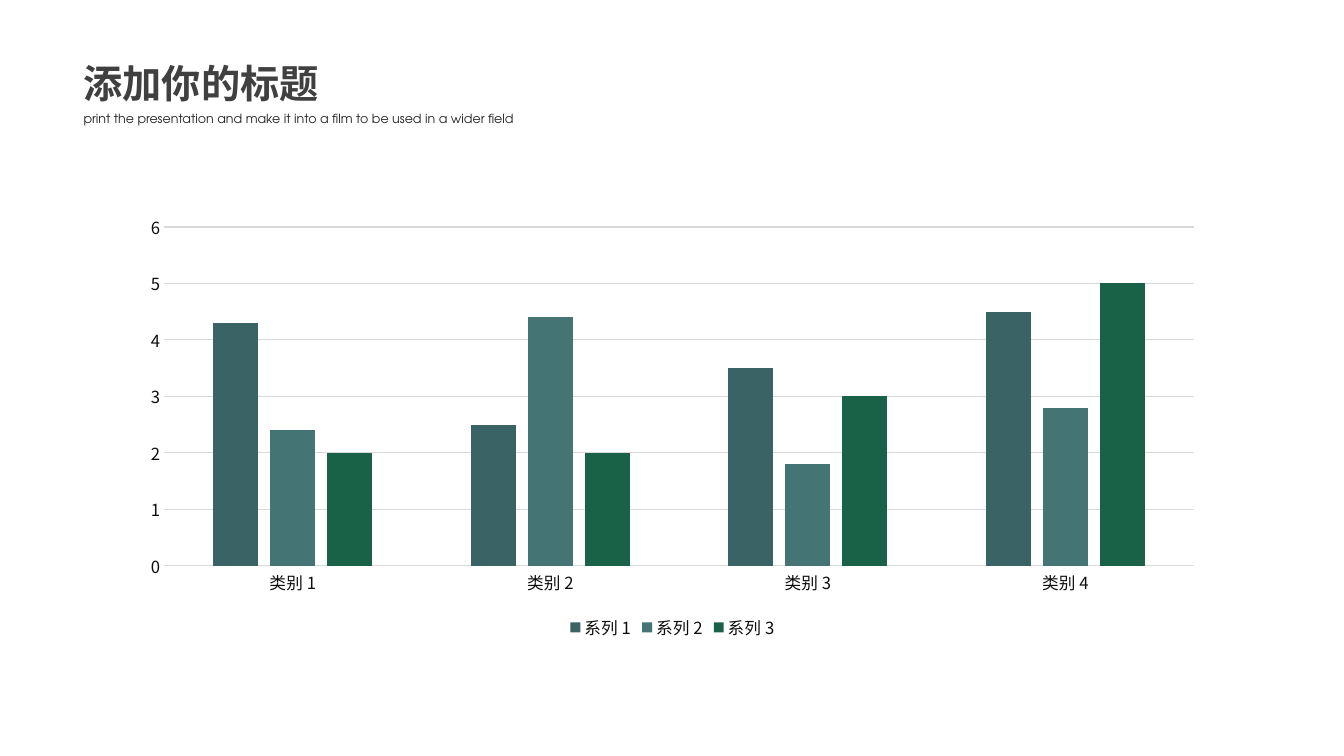
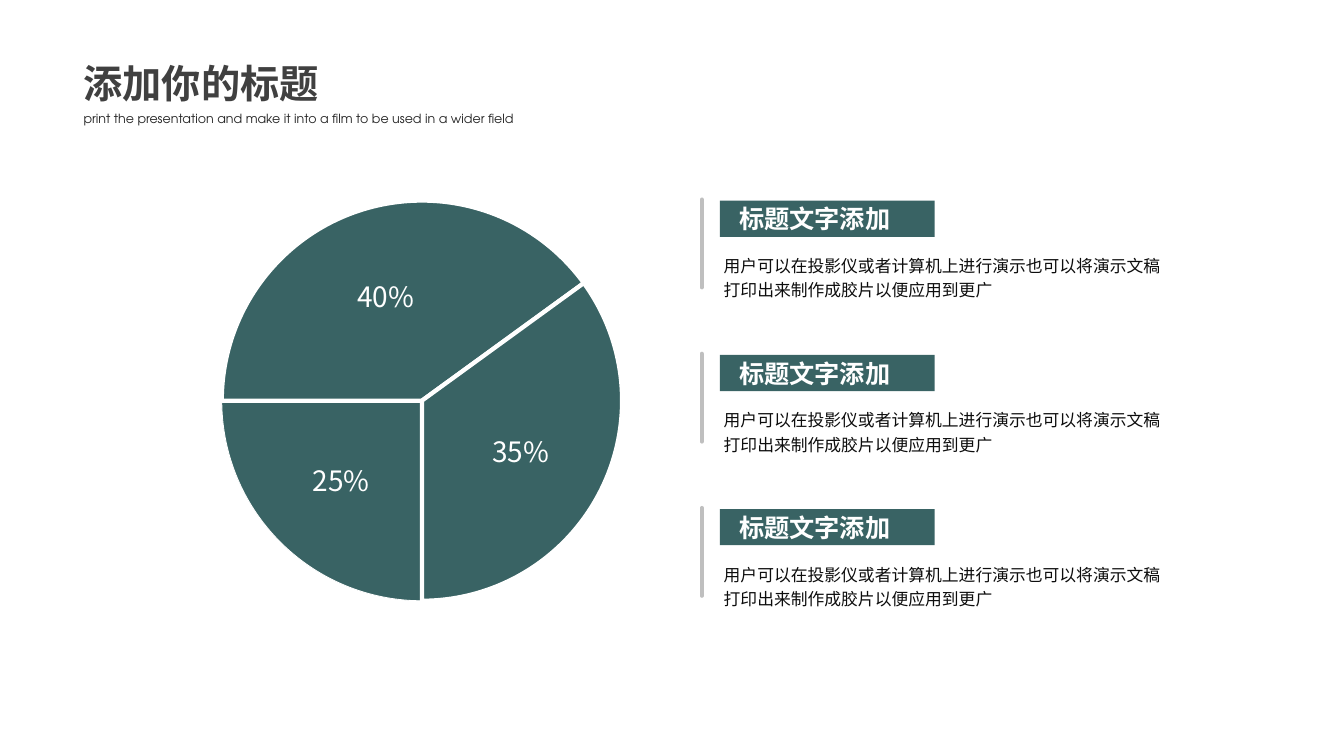
import pptx
import pptx.util
import pptx.chart.data
import pptx.dml.color
import pptx.enum.chart
import pptx.enum.shapes
import pptx.enum.text
import pptx.oxml.ns
import lxml.etree

PX = 9144
COLORS = {
    "white": "FFFFFF",
    "title": "404040",
    "subtitle": "262626",
    "text": "0D0D0D",
    "rule": "BFBFBF",
    "grid": "D9D9D9",
    "teal": "396364",
    "light teal": "457474",
    "green": "1A6247",
}
RGB = {name: pptx.dml.color.RGBColor.from_string(value) for name, value in COLORS.items()}
CJK = "Noto Sans CJK SC"
LEFT = pptx.enum.text.PP_ALIGN.LEFT
CENTER = pptx.enum.text.PP_ALIGN.CENTER
TOP = pptx.enum.text.MSO_ANCHOR.TOP
MIDDLE = pptx.enum.text.MSO_ANCHOR.MIDDLE
qn = pptx.oxml.ns.qn

TITLE_FONT = {"size": pptx.util.Pt(28), "name": "Arial", "bold": True}
SUBTITLE_FONT = {"size": pptx.util.Pt(9), "name": "TeX Gyre Adventor"}
SHARE_FONT = {"size": pptx.util.Pt(20), "name": CJK}
HEADING_FONT = {"size": pptx.util.Pt(18), "name": CJK, "bold": True}
BODY_FONT = {"size": pptx.util.Pt(12), "name": CJK}
CHART_FONT = {"size": pptx.util.Pt(11.9), "name": CJK}


def px(*lengths):
    return [pptx.util.Emu(length * PX) for length in lengths]


def write(shape, text, font, color, align=LEFT, **frame_format):
    frame = shape.text_frame
    for attribute, value in frame_format.items():
        setattr(frame, attribute, value)
    paragraph = frame.paragraphs[0]
    paragraph.alignment = align
    run = paragraph.add_run()
    run.text = text
    for attribute, value in font.items():
        setattr(run.font, attribute, value)
    run.font.color.rgb = RGB[color]
    east_asian = lxml.etree.SubElement(run.font._element, qn("a:ea"))
    east_asian.set("typeface", CJK)
    return paragraph


presentation = pptx.Presentation()
presentation.slide_width, presentation.slide_height = px(1333, 750)

slides = []
for number in range(2):
    slide = presentation.slides.add_slide(presentation.slide_layouts[5])
    title = slide.shapes.title
    title.left, title.top, title.width, title.height = px(73, 54, 256, 57)
    write(title, "添加你的标题", TITLE_FONT, "title", word_wrap=False, vertical_anchor=TOP,
          auto_size=pptx.enum.text.MSO_AUTO_SIZE.NONE)
    subtitle = slide.shapes.add_textbox(*px(73, 105, 452, 25))
    write(subtitle, "print the presentation and make it into a film to be used in a wider field",
          SUBTITLE_FONT, "subtitle", word_wrap=False)
    slides.append(slide)
comparison, shares = slides

SERIES = [
    ("系列 1", (4.3, 2.5, 3.5, 4.5), "teal"),
    ("系列 2", (2.4, 4.4, 1.8, 2.8), "light teal"),
    ("系列 3", (2, 2, 3, 5), "green"),
]
category_data = pptx.chart.data.CategoryChartData()
category_data.categories = ["类别 1", "类别 2", "类别 3", "类别 4"]
for name, values, color in SERIES:
    category_data.add_series(name, values)
chart = comparison.shapes.add_chart(
    pptx.enum.chart.XL_CHART_TYPE.COLUMN_CLUSTERED, *px(128, 204, 1078, 435), category_data).chart
chart.has_title = False
chart.has_legend = True
chart.legend.position = pptx.enum.chart.XL_LEGEND_POSITION.BOTTOM
chart.legend.include_in_layout = False

columns = chart.plots[0]
for attribute, value in {"gap_width": 219, "overlap": -27, "vary_by_categories": False}.items():
    setattr(columns, attribute, value)
for series, (name, values, color) in zip(columns.series, SERIES):
    series.format.fill.solid()
    series.format.fill.fore_color.rgb = RGB[color]

for axis in (chart.category_axis, chart.value_axis):
    axis.major_tick_mark = axis.minor_tick_mark = pptx.enum.chart.XL_TICK_MARK.NONE
for attribute, value in {"minimum_scale": 0, "maximum_scale": 6, "major_unit": 1}.items():
    setattr(chart.value_axis, attribute, value)
chart.value_axis.format.line.fill.background()
for line in (chart.category_axis.format.line, chart.value_axis.major_gridlines.format.line):
    line.color.rgb = RGB["grid"]
    line.width = pptx.util.Pt(0.75)

for font in (chart.font, chart.legend.font,
             chart.category_axis.tick_labels.font, chart.value_axis.tick_labels.font):
    for attribute, value in CHART_FONT.items():
        setattr(font, attribute, value)
    font.color.rgb = RGB["text"]
    lxml.etree.SubElement(font._element, qn("a:ea")).set("typeface", CJK)

SHARES = [
    (25, -80, 79, 0.6),
    (40, -36, -104, 3),
    (35, 98, 50, 3),
]
start = 90
for percent, label_dx, label_dy, outline in SHARES:
    end = (start + percent * 3.6) % 360
    slice_ = shares.shapes.add_shape(pptx.enum.shapes.MSO_SHAPE.PIE, *px(220, 199, 397, 397))
    slice_.shadow.inherit = False
    slice_.adjustments[0] = start * 0.6
    slice_.adjustments[1] = end * 0.6
    slice_.fill.solid()
    slice_.fill.fore_color.rgb = RGB["teal"]
    slice_.line.color.rgb = RGB["white"]
    slice_.line.width = pptx.util.Pt(outline)
    left, right, top, bottom = px(*(max(0, 2 * shift) for shift in (label_dx, -label_dx, label_dy, -label_dy)))
    write(slice_, f"{percent}%", SHARE_FONT, "white", CENTER, vertical_anchor=MIDDLE,
          margin_left=left, margin_right=right, margin_top=top, margin_bottom=bottom)
    start = end

NOTES = [("标题文字添加", "用户可以在投影仪或者计算机上进行演示也可以将演示文稿打印出来制作成胶片以便应用到更广")] * 3
for row, (heading, body) in enumerate(NOTES):
    top = 199 + 153 * row
    banner = shares.shapes.add_shape(pptx.enum.shapes.MSO_SHAPE.RECTANGLE, *px(714, top, 213, 36))
    banner.shadow.inherit = False
    banner.fill.solid()
    banner.fill.fore_color.rgb = RGB["teal"]
    banner.line.fill.background()
    write(banner, heading, HEADING_FONT, "white", vertical_anchor=MIDDLE,
          margin_left=px(19)[0], margin_top=0, margin_bottom=0)

    rule = shares.shapes.add_connector(
        pptx.enum.shapes.MSO_CONNECTOR.STRAIGHT, *px(696, top - 1, 696, top + 86))
    rule.line.color.rgb = RGB["rule"]
    rule.line.width = pptx.util.Pt(3)
    rule.line._get_or_add_ln().set("cap", "rnd")
    lxml.etree.SubElement(rule._element.spPr, qn("a:effectLst"))

    detail = shares.shapes.add_textbox(*px(708, top + 46, 460, 59))
    write(detail, body, BODY_FONT, "text", word_wrap=True).line_spacing = 1.2

presentation.save("out.pptx")
